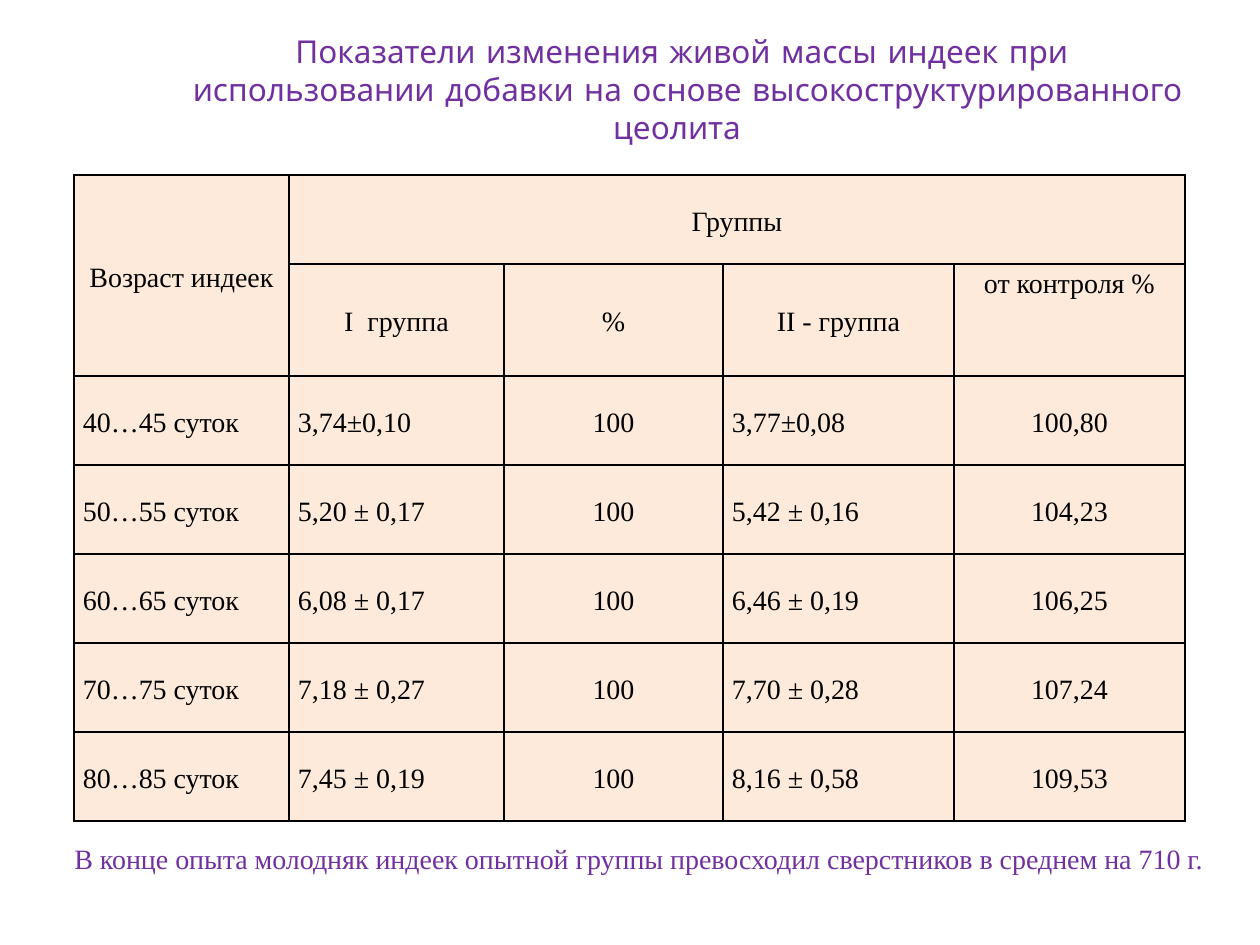
from lxml import etree
from pptx import Presentation
from pptx.dml.color import RGBColor
from pptx.enum.text import MSO_ANCHOR, MSO_AUTO_SIZE, PP_ALIGN
from pptx.oxml.ns import qn
from pptx.util import Pt

CENTER, JUSTIFY = PP_ALIGN.CENTER, PP_ALIGN.JUSTIFY
TOP, MIDDLE = MSO_ANCHOR.TOP, MSO_ANCHOR.MIDDLE
FIT_SHAPE = MSO_AUTO_SIZE.SHAPE_TO_FIT_TEXT

COLORS = {"accent": "7030A0", "ink": "000000", "cell": "FDEADA"}
TITLE_FONT, BODY_FONT = "Comic Neue", "Times New Roman"
TITLE_ROWS = [
    ("Показатели изменения живой массы индеек при", 10),
    ("использовании добавки на основе высокоструктурированного цеолита", 22),
]
HEADER_ROWS = [
    ["Возраст индеек", "Группы", "", "", ""],
    ["", "I  группа", "%", "II - группа", "от контроля %"],
]
WEIGHT_ROWS = [
    ["40…45 суток", "3,74±0,10", "100", "3,77±0,08", "100,80"],
    ["50…55 суток", "5,20 ± 0,17", "100", "5,42 ± 0,16", "104,23"],
    ["60…65 суток", "6,08 ± 0,17", "100", "6,46 ± 0,19", "106,25"],
    ["70…75 суток", "7,18 ± 0,27", "100", "7,70 ± 0,28", "107,24"],
    ["80…85 суток", "7,45 ± 0,19", "100", "8,16 ± 0,58", "109,53"],
]
CONCLUSION = ("В конце опыта молодняк индеек опытной группы превосходил "
              "сверстников в среднем на 710 г.")


def px(length):
    return round(length * 914400 / 126)


class SlideBuilder:
    def __init__(self, slide):
        self.slide = slide

    def format(self, paragraph, text, font, size, color, align, indent=0):
        paragraph.text = text
        paragraph.alignment = align
        if indent:
            properties = paragraph._p.get_or_add_pPr()
            properties.set("marL", "0")
            properties.set("indent", str(px(indent)))
        paragraph.font.name = font
        paragraph.font.size = Pt(size)
        paragraph.font.color.rgb = RGBColor.from_string(COLORS[color])

    def title(self, left, top, width, height, rows):
        heading = self.slide.shapes.title
        heading.left, heading.top = px(left), px(top)
        heading.width, heading.height = px(width), px(height)
        frame = heading.text_frame
        frame.word_wrap, frame.auto_size = True, FIT_SHAPE
        frame.vertical_anchor = TOP
        for index, (text, indent) in enumerate(rows):
            paragraph = frame.add_paragraph() if index else frame.paragraphs[0]
            self.format(paragraph, text, TITLE_FONT, 18, "accent", CENTER, indent)

    def note(self, left, top, width, height, text, indent):
        box = self.slide.shapes.add_textbox(px(left), px(top), px(width), px(height))
        frame = box.text_frame
        frame.word_wrap, frame.auto_size = True, FIT_SHAPE
        frame.vertical_anchor = MIDDLE
        self.format(frame.paragraphs[0], text, BODY_FONT, 16, "accent", JUSTIFY, indent)

    def borders(self, cell):
        properties = cell._tc.get_or_add_tcPr()
        for side in ("lnL", "lnR", "lnT", "lnB"):
            line = etree.SubElement(properties, qn(f"a:{side}"), w=str(Pt(1)))
            fill = etree.SubElement(line, qn("a:solidFill"))
            etree.SubElement(fill, qn("a:srgbClr"), val=COLORS["ink"])

    def cell(self, cell, text, align, anchor):
        cell.margin_left = cell.margin_right = px(9)
        cell.margin_top = cell.margin_bottom = 0
        cell.vertical_anchor = anchor
        self.borders(cell)
        cell.fill.solid()
        cell.fill.fore_color.rgb = RGBColor.from_string(COLORS["cell"])
        paragraph = cell.text_frame.paragraphs[0]
        self.format(paragraph, text, BODY_FONT, 16, "ink", align)
        paragraph.line_spacing = 1.15

    def table(self, left, top, widths, heights, rows, header_count):
        table = self.slide.shapes.add_table(
            len(rows), len(widths), px(left), px(top),
            px(sum(widths)), px(sum(heights))).table
        for column, width in zip(table.columns, widths):
            column.width = px(width)
        for row, height in zip(table.rows, heights):
            row.height = px(height)
        last = len(widths) - 1
        for r, row in enumerate(rows):
            for c, text in enumerate(row):
                # Ages and weights are justified, headings and percentages centred
                align = JUSTIFY if r >= header_count and c in (0, 1, 3) else CENTER
                anchor = TOP if (r, c) == (1, last) else MIDDLE
                self.cell(table.cell(r, c), text, align, anchor)
        table.cell(0, 0).merge(table.cell(1, 0))
        table.cell(0, 1).merge(table.cell(0, last))


def main():
    presentation = Presentation()
    presentation.slide_width, presentation.slide_height = px(1260), px(945)
    builder = SlideBuilder(presentation.slides.add_slide(presentation.slide_layouts[5]))

    # Heading
    builder.title(94, 26, 1166, 127, TITLE_ROWS)

    # Live weight by age and group
    builder.table(74, 175, [215, 215, 219, 231, 231], [89, 112] + [89] * 5,
                  HEADER_ROWS + WEIGHT_ROWS, len(HEADER_ROWS))

    # Conclusion
    builder.note(0, 835, 1260, 47, CONCLUSION, 62)

    presentation.save("out.pptx")


if __name__ == "__main__":
    main()
